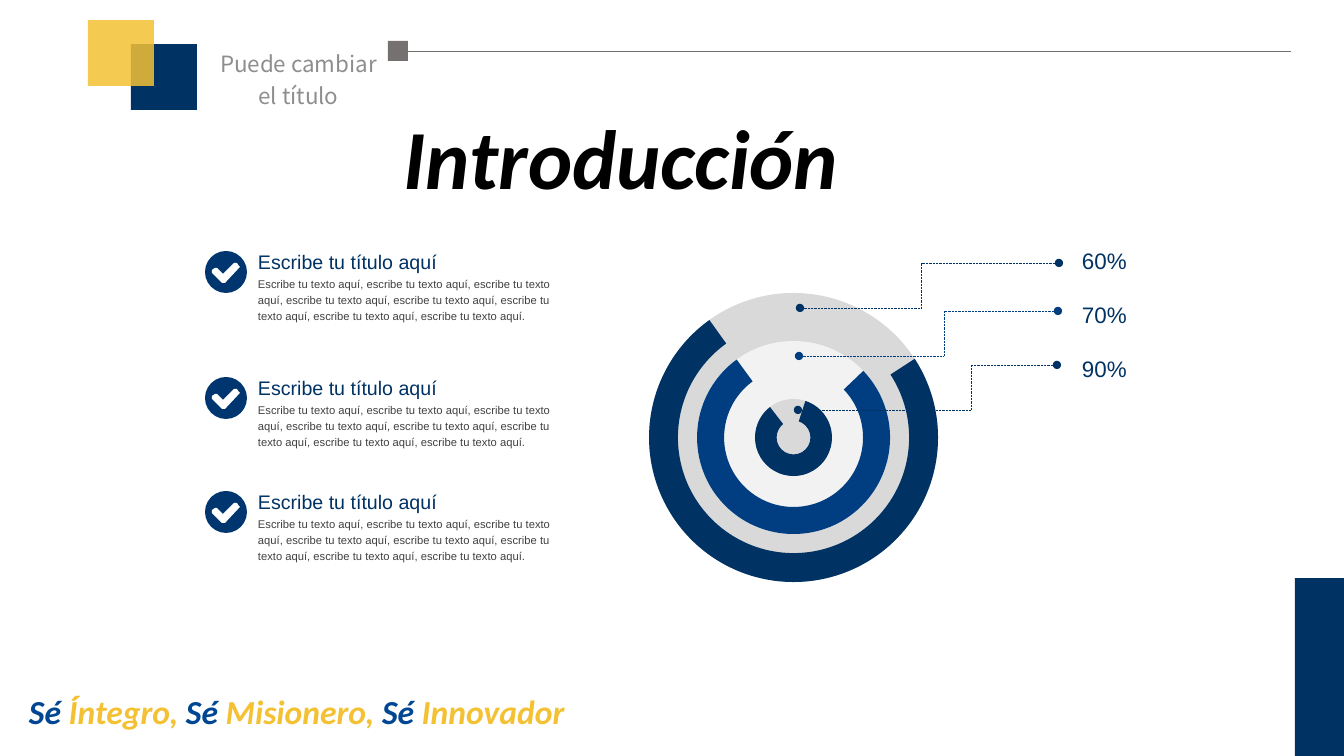
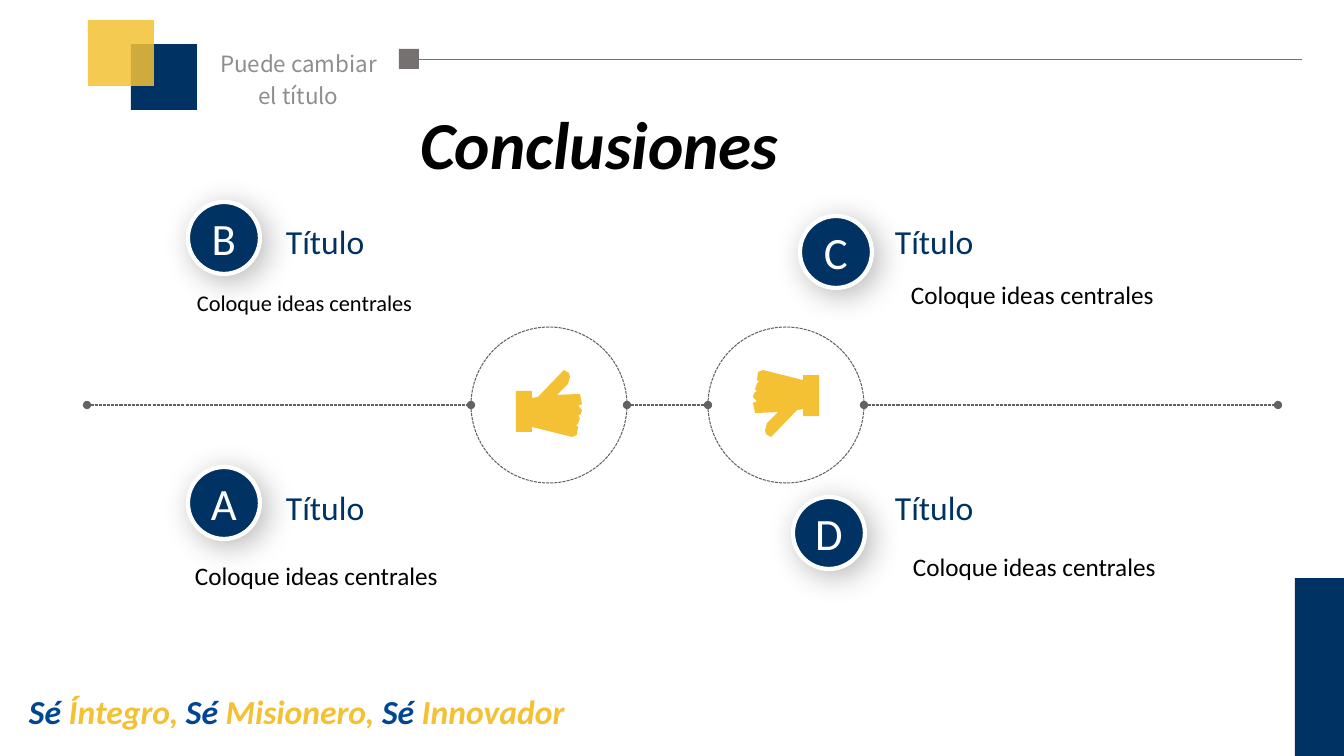
from lxml.etree import SubElement
from pptx import Presentation
from pptx.dml.color import RGBColor
from pptx.enum.dml import MSO_LINE as Dash
from pptx.enum.shapes import MSO_CONNECTOR as Link, MSO_SHAPE as Preset
from pptx.enum.text import MSO_ANCHOR as Anchor, PP_ALIGN as Align
from pptx.oxml.ns import qn
from pptx.util import Emu, Pt

SCALE = 12192000 / 1344
COLORS = {
    "navy": "003264", "blue": "003E81", "check": "003670", "motto": "004692",
    "yellow": "F3C133", "silver": "D9D9D9", "pale": "F2F2F2", "white": "FFFFFF",
    "black": "000000", "body": "404040", "dash": "626262", "marker": "767171",
    "caption": "8E8E8E",
}
MOTTO = [("Sé", "motto"), (" Íntegro, ", "yellow"), ("Sé", "motto"),
         (" Misionero, ", "yellow"), ("Sé", "motto"), (" Innovador", "yellow")]
BODY = ("Escribe tu texto aquí, escribe tu texto aquí, escribe tu texto aquí, "
        "escribe tu texto aquí, escribe tu texto aquí, escribe tu texto aquí, "
        "escribe tu texto aquí, escribe tu texto aquí.")
CHECK = [(34, 15), (32, 12), (29, 12), (18, 23), (12, 17), (10, 17), (7, 19),
         (7, 22), (17, 32), (20, 32), (34, 17), (35, 16)]
THUMB = [(64, 24), (66, 34), (62, 36), (66, 40), (65, 44), (62, 46), (64, 48),
         (62, 54), (60, 55), (62, 57), (61, 65), (56, 67), (24, 59), (16, 57),
         (16, 62), (0, 62), (0, 21), (16, 21), (16, 28), (22, 27), (48, 0),
         (53, 3), (54, 7), (52, 14), (47, 19), (41, 25)]


def px(length):
    """Turn px into EMU."""
    return Emu(round(length * SCALE))


def rgb(color):
    """Look up a named colour."""
    return RGBColor.from_string(COLORS[color])


def paint(shape, color):
    """Give a shape a plain fill without outline or shadow."""
    shape.shadow.inherit = False
    shape.fill.solid()
    shape.fill.fore_color.rgb = rgb(color)
    shape.line.fill.background()
    return shape


def add_preset(slide, preset, left, top, width, height, color):
    """Add a filled preset shape."""
    return paint(slide.shapes.add_shape(
        preset, px(left), px(top), px(width), px(height)), color)


def add_outline(slide, points, left, top, color):
    """Add a filled polygon whose points are relative to left and top."""
    builder = slide.shapes.build_freeform(*points[0], scale=SCALE)
    builder.add_line_segments(points[1:], close=True)
    return paint(builder.convert_to_shape(px(left), px(top)), color)


def style_paragraph(paragraph, size, color, font="Calibri", align=Align.LEFT, spacing=None):
    """Set the font, alignment and line spacing of a paragraph."""
    paragraph.font.size = Pt(size)
    paragraph.font.name = font
    paragraph.font.color.rgb = rgb(color)
    paragraph.alignment = align
    paragraph.line_spacing = spacing


def add_text(slide, left, top, width, height, text, size, color,
             inset=True, anchor=Anchor.TOP, **style):
    """Add a wrapping text box with one paragraph and return the paragraph."""
    frame = slide.shapes.add_textbox(px(left), px(top), px(width), px(height)).text_frame
    frame.word_wrap = True
    frame.vertical_anchor = anchor
    if not inset:
        frame.margin_left = frame.margin_right = frame.margin_top = frame.margin_bottom = 0
    paragraph = frame.paragraphs[0]
    paragraph.text = text
    style_paragraph(paragraph, size, color, **style)
    return paragraph


def add_line(slide, start, end, color, width, link=Link.STRAIGHT, dash=None, bend=None):
    """Add a connector, with oval ends when dashed."""
    line = slide.shapes.add_connector(link, *map(px, start + end))
    line.line.color.rgb = rgb(color)
    line.line.width = Pt(width)
    properties = line._element.spPr
    if dash:
        line.line.dash_style = dash
        for tip in ("a:headEnd", "a:tailEnd"):
            SubElement(properties.find(qn("a:ln")), qn(tip), type="oval")
    if bend:
        guides = properties.find(qn("a:prstGeom")).find(qn("a:avLst"))
        SubElement(guides, qn("a:gd"), name="adj1", fmla=f"val {round(bend * 100000)}")
    SubElement(properties, qn("a:effectLst"))
    return line


def add_frame(slide, marker_left, marker_top):
    """Draw the header, motto and corner band shared by the slides."""
    line = add_line(slide, (marker_left + 20, marker_top + 10),
                    (marker_left + 903, marker_top + 10), "marker", 0.5)
    marker = add_preset(slide, Preset.RECTANGLE, marker_left, marker_top, 20, 20, "marker")
    line.begin_connect(marker, 3)
    add_text(slide, 211, 45, 175, 64, "Puede cambiar el título", 16, "caption", inset=False,
             font="Noto Sans CJK SC", align=Align.CENTER, spacing=1.2)
    add_preset(slide, Preset.RECTANGLE, 131, 44, 66, 66, "navy")
    front = add_preset(slide, Preset.RECTANGLE, 88, 20, 66, 66, "yellow")
    SubElement(front._element.spPr.find(qn("a:solidFill"))[0], qn("a:alpha"), val="85000")
    motto = add_text(slide, 19, 686, 640, 50, "", 24, "motto")
    motto.font.bold = motto.font.italic = True
    for words, color in MOTTO:
        run = motto.add_run()
        run.text = words
        run.font.color.rgb = rgb(color)
    add_preset(slide, Preset.RECTANGLE, 1295, 578, 49, 178, "navy")


def add_title(slide, left, top, width, height, text, size):
    """Add the slide title, resting on the bottom of its box."""
    title = add_text(slide, left, top, width, height, text, size, "black",
                     anchor=Anchor.BOTTOM, align=Align.CENTER, spacing=0.9)
    title.font.bold = title.font.italic = True


def add_point(slide, left, top):
    """Add a check mark with a heading and a paragraph."""
    add_preset(slide, Preset.OVAL, left, top + 6, 42, 42, "check")
    add_outline(slide, CHECK, left, top + 6, "white")
    add_text(slide, left + 53, top, 304, 26, "Escribe tu título aquí", 14, "navy",
             inset=False, font="Arial", spacing=1.2)
    add_text(slide, left + 53, top + 30, 304, 48, BODY, 8, "body",
             inset=False, font="Arial", spacing=1.2)


def add_rings(slide, left, top, size):
    """Draw the concentric progress rings."""
    rings = [(size, "silver", "navy", (146.99, 54.4, 0.1)),
             (193, "pale", "blue", (136.3, 53.9, 0.14)),
             (77, "silver", "navy", (108, 52.37, 0.28))]
    for diameter, track, bar, (start, end, thickness) in rings:
        inset = (size - diameter) // 2
        box = (left + inset, top + inset, diameter, diameter)
        add_preset(slide, Preset.OVAL, *box, track)
        arc = add_preset(slide, Preset.BLOCK_ARC, *box, bar)
        arc.rotation = 180
        arc.adjustments[0] = start * 0.6
        arc.adjustments[1] = end * 0.6
        arc.adjustments[2] = thickness


def add_callouts(slide, left, top):
    """Lead from each ring to its percentage."""
    callouts = [("60%", 63, 0.47, "navy"), ("70%", 111, 0.56, "blue"), ("90%", 165, 0.67, "navy")]
    for row, (share, drop, bend, color) in enumerate(callouts):
        start = (left - row, top + drop)
        add_line(slide, start, (start[0] + 259, start[1] - 45), color, 0.5,
                 Link.ELBOW, Dash.ROUND_DOT, bend)
        add_text(slide, left + 282, top + 54 * row, 80, 29, share, 16, "navy", inset=False,
                 anchor=Anchor.BOTTOM, font="Arial", spacing=1.2)


def add_axis(slide, left, middle):
    """Draw the dashed axis with the two thumb circles."""
    size = 156
    circles = [left + 384, left + 621]
    for circle_left, turn in zip(circles, (0, 180)):
        circle = add_preset(slide, Preset.OVAL, circle_left, middle - size // 2,
                            size, size, "white")
        circle.fill.background()
        circle.line.color.rgb = rgb("dash")
        circle.line.width = Pt(0.75)
        circle.line.dash_style = Dash.SQUARE_DOT
        add_outline(slide, THUMB, circle_left + 45, middle - 35, "yellow").rotation = turn
    starts = [left] + [circle_left + size for circle_left in circles]
    for start, end in zip(starts, circles + [left + 1191]):
        add_line(slide, (start, middle), (end, middle), "dash", 0.75, dash=Dash.SQUARE_DOT)


def add_badge(slide, left, top, letter):
    """Add a round lettered badge with a soft shadow."""
    badge = add_preset(slide, Preset.OVAL, left, top, 72, 72, "navy")
    badge.line.color.rgb = rgb("white")
    badge.line.width = Pt(3)
    effects = badge._element.spPr.find(qn("a:effectLst"))
    shadow = SubElement(effects, qn("a:outerShdw"), blurRad=str(Pt(22)), dist=str(Pt(6)),
                        dir="2700000", algn="tl", rotWithShape="0")
    tint = SubElement(shadow, qn("a:srgbClr"), val=COLORS["black"])
    SubElement(tint, qn("a:alpha"), val="28000")
    frame = badge.text_frame
    frame.margin_left = frame.margin_right = frame.margin_top = frame.margin_bottom = 0
    frame.vertical_anchor = Anchor.MIDDLE
    frame.paragraphs[0].text = letter
    style_paragraph(frame.paragraphs[0], 32, "white", align=Align.CENTER)


def add_idea(slide, left, top, letter, badge, idea, size=18):
    """Add a heading with a badge and an idea at offsets from it."""
    add_badge(slide, left + badge[0], top + badge[1], letter)
    add_text(slide, left, top, 120, 50, "Título", 24, "navy")
    add_text(slide, left + idea[0], top + idea[1], 300, 40,
             "Coloque ideas centrales", size, "black")


def build_introduction(slide):
    """Build the introduction slide."""
    add_frame(slide, 388, 41)
    add_title(slide, 161, 127, 920, 86, "Introducción", 60)
    add_rings(slide, 649, 293, 289)
    add_callouts(slide, 800, 245)
    for top in (245, 371, 485):
        add_point(slide, 205, top)


def build_conclusions(slide):
    """Build the conclusions slide."""
    add_frame(slide, 399, 49)
    add_title(slide, 89, 43, 1021, 146, "Conclusiones", 48)
    add_axis(slide, 87, 405)
    add_idea(slide, 276, 482, "A", (-88, -15), (-91, 73))
    add_idea(slide, 276, 216, "B", (-88, -14), (-89, 68), 16)
    add_idea(slide, 885, 216, "C", (-85, 0), (16, 58))
    add_idea(slide, 885, 482, "D", (-92, 15), (18, 64))


def main():
    """Build and save the presentation."""
    deck = Presentation()
    deck.slide_width, deck.slide_height = px(1344), px(756)
    for build in (build_introduction, build_conclusions):
        build(deck.slides.add_slide(deck.slide_layouts[6]))
    deck.save("out.pptx")


if __name__ == "__main__":
    main()
